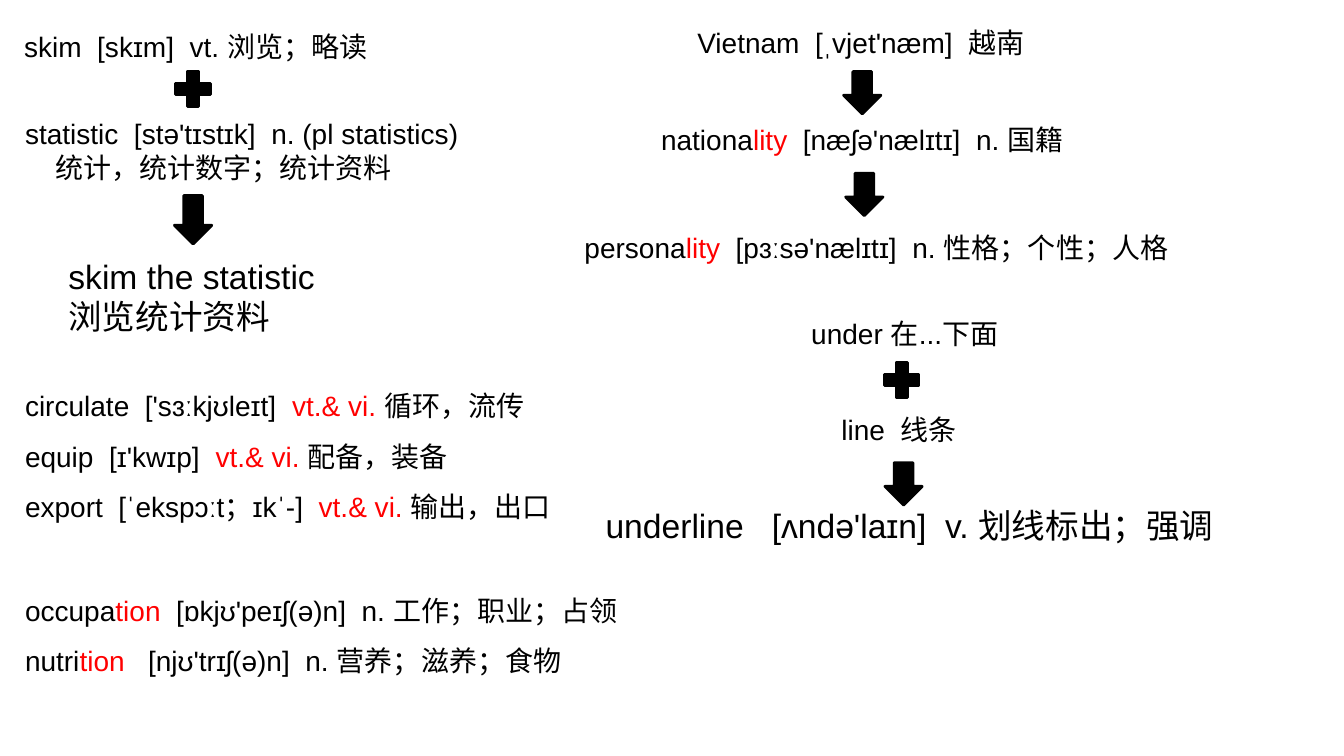
import pptx
import pptx.util
import pptx.dml.color
import pptx.enum.shapes
import pptx.enum.text

Pt = pptx.util.Pt
SHAPE = pptx.enum.shapes.MSO_SHAPE
BLACK = pptx.dml.color.RGBColor(0, 0, 0)
RED = pptx.dml.color.RGBColor(255, 0, 0)
FONT = "Arial"
BODY, LARGE = 20, 24
ROW = 31


def add_text(slide, left, top, width, height, lines, size=BODY, gap=None):
    """Add left-aligned lines; the parts between bars are red."""
    box = slide.shapes.add_textbox(Pt(left), Pt(top), Pt(width), Pt(height))
    frame = box.text_frame
    frame.word_wrap = True
    frame.auto_size = pptx.enum.text.MSO_AUTO_SIZE.SHAPE_TO_FIT_TEXT
    for row, line in enumerate(lines):
        para = frame.add_paragraph() if row else frame.paragraphs[0]
        if gap:
            para.line_spacing = gap
        for part, text in enumerate(line.split("|")):
            run = para.add_run()
            run.text = text
            run.font.name = FONT
            run.font.size = Pt(size)
            run.font.color.rgb = RED if part % 2 else BLACK
    return box


def add_sign(slide, kind, left, top, width, height):
    sign = slide.shapes.add_shape(kind, Pt(left), Pt(top), Pt(width), Pt(height))
    sign.shadow.inherit = False
    sign.fill.solid()
    sign.fill.fore_color.rgb = BLACK
    sign.line.color.rgb = BLACK
    sign.line.width = Pt(2)


def add_plus(slide, left, top):
    add_sign(slide, SHAPE.MATH_PLUS, left, top, 33.84, 34.56)


def add_arrow(slide, left, top, height=30.24):
    add_sign(slide, SHAPE.DOWN_ARROW, left, top, 26.64, height)


def hang(para, depth):
    """Indent every line of a paragraph but the first."""
    props = para._p.get_or_add_pPr()
    props.set("marL", str(Pt(depth)))
    props.set("indent", str(-Pt(depth)))


def skim_sum(slide, left, top):
    add_text(slide, left, top, 262.8, ROW, ["skim  [skɪm]  vt. 浏览；略读"])
    noun = add_text(slide, left + 0.7, top + 62.6, 327.6, 55.4, [
        "statistic  [stə'tɪstɪk]  n. (pl statistics) 统计，统计数字；统计资料"])
    hang(noun.text_frame.paragraphs[0], 21.6)
    add_plus(slide, left + 110.9, top + 28.8)
    add_arrow(slide, left + 114.5, top + 122.4, 34.56)
    add_text(slide, left + 31.7, top + 162, 201.6, 64.8,
             ["skim the statistic", "浏览统计资料"], LARGE)


def word_list(slide, left, top, width, height, lines):
    add_text(slide, left, top, width, height, lines, gap=1.5)


def suffix_chain(slide, left, top):
    add_text(slide, left + 80.6, top, 263.5, ROW,
             ["Vietnam  [ˌvjet'næm]  越南"])
    add_arrow(slide, left + 192.2, top + 36.7)
    add_text(slide, left + 54.7, top + 69.8, 311.8, ROW,
             ["nationa|lity|  [næʃə'nælɪtɪ]  n. 国籍"])
    add_arrow(slide, left + 193.7, top + 109.4)
    add_text(slide, left, top + 146.9, 441.4, ROW,
             ["persona|lity | [pɜːsə'nælɪtɪ]  n. 性格；个性；人格"])


def line_sum(slide, left, top):
    add_text(slide, left + 146.9, top, 165.6, ROW, ["under 在...下面"])
    add_plus(slide, left + 201.6, top + 31.7)
    add_text(slide, left + 168.5, top + 68.4, 113, ROW, ["line  线条"])
    add_arrow(slide, left + 206.6, top + 108)
    add_text(slide, left, top + 134.6, 487.4, 36,
             ["underline   [ʌndə'laɪn]  v. 划线标出；强调"], LARGE)


def main():
    deck = pptx.Presentation()
    deck.slide_width, deck.slide_height = Pt(960), Pt(540)
    slide = deck.slides.add_slide(deck.slide_layouts[6])
    skim_sum(slide, 10.1, 17.3)
    word_list(slide, 10.8, 262.1, 408.2, 115.2, [
        "circulate  ['sɜːkjʊleɪt]  |vt.& vi. |循环，流传",
        "equip  [ɪ'kwɪp]  |vt.& vi. |配备，装备",
        "export  [ˈekspɔːt；ɪkˈ-]  |vt.& vi. |输出，出口"])
    word_list(slide, 10.8, 408.2, 450.7, 79.2, [
        "occupa|tion|  [ɒkjʊ'peɪʃ(ə)n]  n. 工作；职业；占领",
        "nutri|tion |  [njʊ'trɪʃ(ə)n]  n. 营养；滋养；食物"])
    suffix_chain(slide, 410.4, 14.4)
    line_sum(slide, 425.5, 222.5)
    deck.save("out.pptx")


if __name__ == "__main__":
    main()
